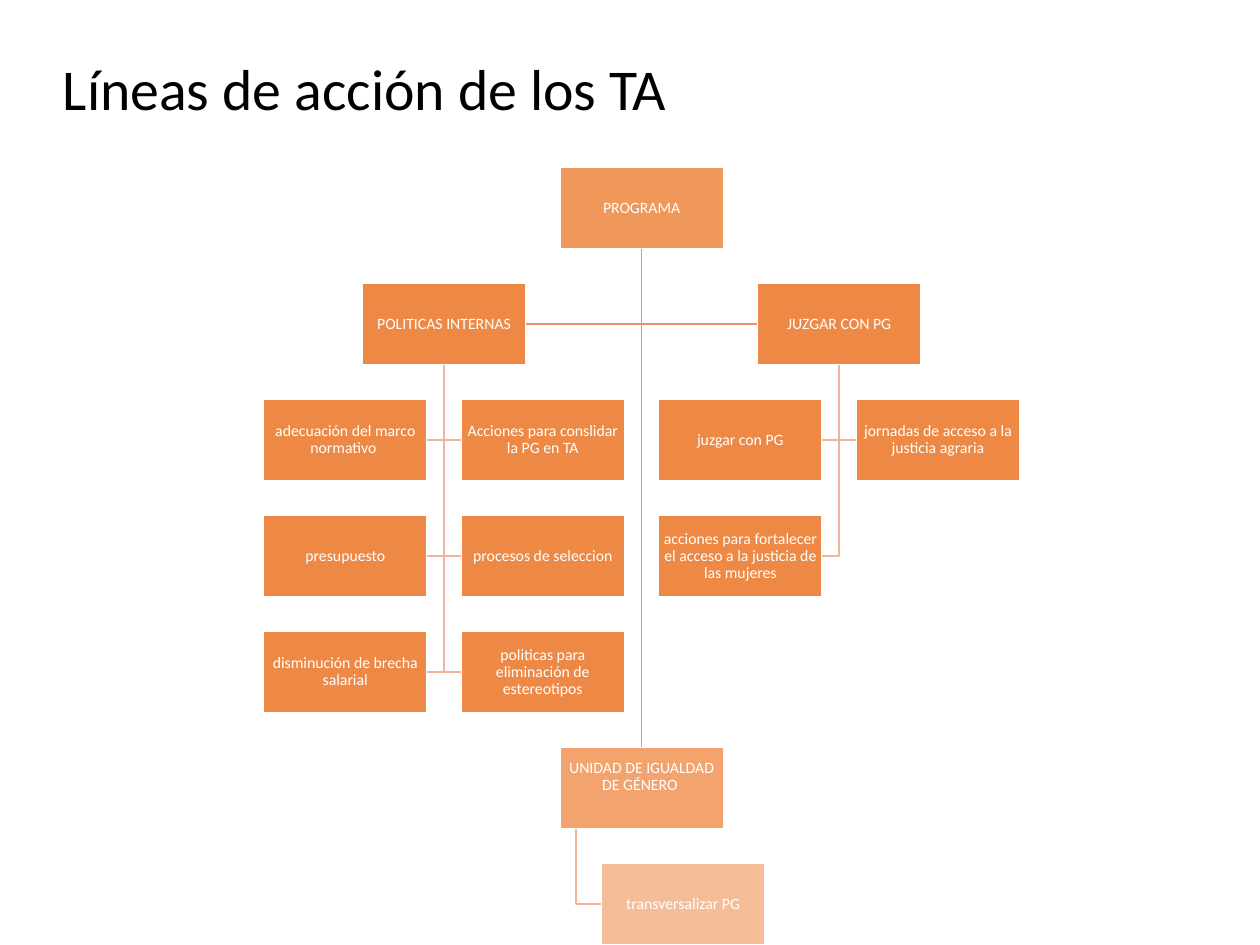
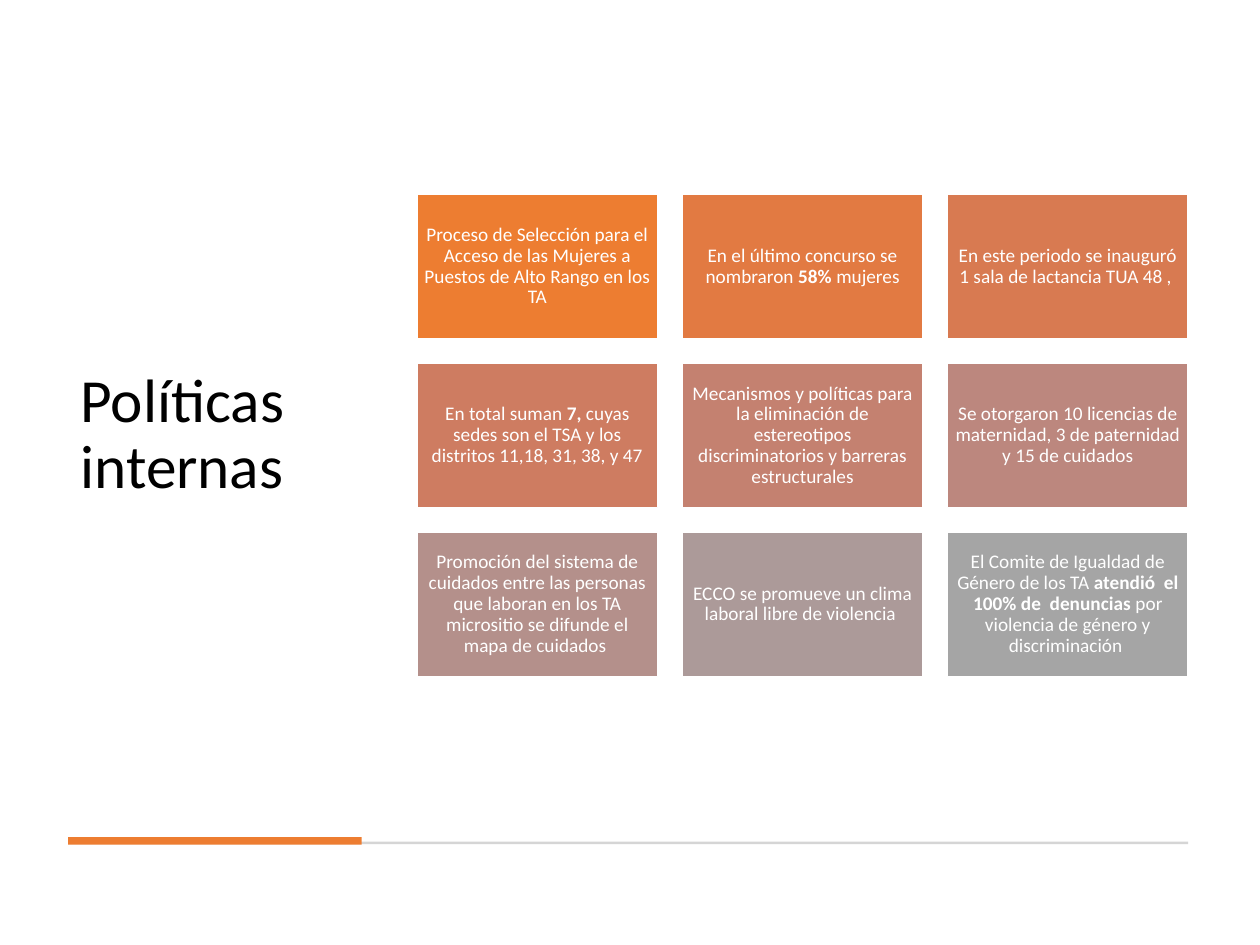
from dataclasses import dataclass
from typing import NamedTuple

from lxml import etree
from pptx import Presentation
from pptx import util as u
from pptx.dml.color import RGBColor
from pptx.enum import shapes, text
from pptx.oxml.ns import qn


@dataclass(frozen=True)
class Theme:
    font: str = "Calibri"
    ink: str = "000000"
    white: str = "FFFFFF"
    accent: str = "ED7D31"
    rule: str = "D5D5D5"
    trunk: str = "EF9166"
    branch: str = "F3B29A"
    line: float = 1
    chart_title: int = 33
    side_title: int = 35
    node: int = 9
    card: int = 11


T = Theme()
WIDTH, HEIGHT = u.Inches(10), u.Inches(7.5)


class Box(NamedTuple):
    """A rectangle in percent of the slide's width and height."""
    x: float
    y: float
    w: float
    h: float

    def emu(self) -> tuple[int, ...]:
        return tuple(round(share * side / 100) for share, side
                     in zip(self, (WIDTH, HEIGHT, WIDTH, HEIGHT)))


@dataclass(frozen=True)
class Grid:
    """Equal cells: the first cell and the steps between cells, in percent."""
    first: Box
    dx: float
    dy: float

    def cell(self, col: float, row: float) -> Box:
        x, y, w, h = self.first
        return Box(x + col * self.dx, y + row * self.dy, w, h)


@dataclass(frozen=True)
class Node:
    label: str
    col: float
    row: int
    parent: str = ""
    opacity: int = 90
    color: str = T.branch
    start: float = 0.5      # where the branch leaves the parent's bottom side
    foot: float = 0.01      # bottom inset in inches


class Card(NamedTuple):
    color: str
    phrases: tuple[str, ...]  # every second phrase is bold


CHART = Grid(Box(20.9, 17.73, 13, 8.65), 7.84, 12.27)
CARDS = Grid(Box(33.1, 20.55, 19.1, 15.3), 21.05, 17.87)

ROOT, UNIT = "PROGRAMA", "UNIDAD DE IGUALDAD DE GÉNERO "
INTERNAL, JUDGING = "POLITICAS INTERNAS", "JUZGAR CON PG"
NODES = [
    Node(ROOT, 3, 0, opacity=80),
    Node(UNIT, 3, 5, opacity=70, foot=0.19),
    Node("transversalizar PG", 3.42, 6, UNIT, opacity=50, start=0.1),
    Node(INTERNAL, 1, 1, ROOT, color=T.trunk),
    Node("adecuación del marco normativo ", 0, 2, INTERNAL),
    Node("Acciones para conslidar la PG en TA", 2, 2, INTERNAL),
    Node("presupuesto", 0, 3, INTERNAL),
    Node("procesos de seleccion", 2, 3, INTERNAL),
    Node("disminución de brecha salarial", 0, 4, INTERNAL),
    Node("politicas para eliminación de estereotipos", 2, 4, INTERNAL),
    Node(JUDGING, 5, 1, ROOT, color=T.trunk),
    Node("juzgar con PG", 4, 2, JUDGING),
    Node("jornadas de acceso a la justicia agraria", 6, 2, JUDGING),
    Node("acciones para fortalecer el acceso a la justicia de las mujeres", 4, 3, JUDGING),
]

POLICIES = [
    Card("ED7D31", ("Proceso de Selección para el Acceso de las Mujeres a Puestos "
                    "de Alto Rango en los TA",)),
    Card("E27A42", ("En el último concurso se nombraron ", "58% ", "mujeres")),
    Card("D87A51", ("En este periodo se inauguró 1 sala de lactancia TUA 48 , ",)),
    Card("CE7C61", ("En total suman ", "7, ",
                    "cuyas sedes son el TSA y los distritos 11,18, 31, 38, y 47")),
    Card("C48170", ("Mecanismos y políticas para la eliminación de estereotipos "
                    "discriminatorios y barreras estructurales",)),
    Card("BC877E", ("Se otorgaron 10 licencias de maternidad, 3 de paternidad "
                    "y 15 de cuidados",)),
    Card("B4908B", ("Promoción del sistema de cuidados entre las personas que laboran "
                    "en los TA micrositio se difunde el mapa de cuidados ",)),
    Card("AC9A99", ("ECCO se promueve un clima laboral libre de violencia ",)),
    Card("A5A5A5", ("El Comite de Igualdad de Género de los TA ",
                    "atendió  el 100% de  denuncias ",
                    "por violencia de género y discriminación ")),
]


def write(sp, *phrases: str, size: int, color: str = T.white, align=text.PP_ALIGN.CENTER,
          inset: tuple[float, float, float, float] = (0.1, 0.05, 0.1, 0.05)) -> None:
    """Write one paragraph; every second phrase is bold. Inset: left, top, right, bottom."""
    tf = sp.text_frame
    tf.word_wrap = True
    tf.vertical_anchor = text.MSO_ANCHOR.MIDDLE
    (tf.margin_left, tf.margin_top,
     tf.margin_right, tf.margin_bottom) = map(u.Inches, inset)
    p = tf.paragraphs[0]
    p.alignment = align
    p.line_spacing = 0.9
    for i, phrase in enumerate(phrases):
        r = p.add_run()
        r.text = phrase
        r.font.name = T.font
        r.font.size = u.Pt(size)
        r.font.bold = i % 2 == 1
        r.font.color.rgb = RGBColor.from_string(color)


def add_title(s, box: Box, label: str, size: int) -> None:
    sp = s.shapes.add_textbox(*box.emu())
    write(sp, label, size=size, color=T.ink, align=text.PP_ALIGN.LEFT)


def set_line(sp, color: str) -> None:
    sp.line.color.rgb = RGBColor.from_string(color)
    sp.line.width = u.Pt(T.line)


def add_rect(s, box: Box, color: str, border: str = "", opacity: int = 100):
    sp = s.shapes.add_shape(shapes.MSO_SHAPE.RECTANGLE, *box.emu())
    sp.shadow.inherit = False
    sp.fill.solid()
    sp.fill.fore_color.rgb = RGBColor.from_string(color)
    if opacity < 100:
        clr = sp._element.spPr.find(qn("a:solidFill"))[0]
        etree.SubElement(clr, qn("a:alpha"), val=str(opacity * 1000))
    if border:
        set_line(sp, border)
    else:
        sp.line.fill.background()
    return sp


def add_branch(s, parent, child, start: float, color: str) -> None:
    """Go down from the parent's bottom side, then across to the child's near side."""
    x = parent.left + round(parent.width * start)
    y = child.top + child.height // 2
    end = child.left if child.left > x else child.left + child.width
    fb = s.shapes.build_freeform(x, parent.top + parent.height)
    fb.add_line_segments([(x, y), (end, y)], close=False)
    sp = fb.convert_to_shape()
    sp.shadow.inherit = False
    sp.fill.background()
    set_line(sp, color)


def add_trunk(s, top, bottom) -> None:
    cx = s.shapes.add_connector(shapes.MSO_CONNECTOR.STRAIGHT, 0, 0, 0, 0)
    cx.begin_connect(top, 2)
    cx.end_connect(bottom, 0)
    set_line(cx, T.trunk)
    etree.SubElement(cx._element.spPr, qn("a:effectLst"))


def action_lines(s) -> None:
    add_title(s, Box(4, 0, 86.2, 19.33), "Líneas de acción de los TA", T.chart_title)
    # Boxes of the organisation chart
    boxes = {}
    for n in NODES:
        sp = add_rect(s, CHART.cell(n.col, n.row), T.accent, T.white, n.opacity)
        write(sp, n.label, size=T.node, inset=(0.01, 0.01, 0.01, n.foot))
        boxes[n.label] = sp
    # Lines between them
    for n in NODES:
        if n.parent:
            add_branch(s, boxes[n.parent], boxes[n.label], n.start, n.color)
    add_trunk(s, boxes[ROOT], boxes[UNIT])


def internal_policies(s) -> None:
    add_title(s, Box(5.4, 6.27, 23.3, 79.6), "Políticas internas", T.side_title)
    # Rule with its accent
    add_rect(s, Box(5.4, 89.07, 88.9, 0.27), T.rule)
    add_rect(s, Box(5.4, 88.6, 23.3, 0.8), T.accent)
    # Cards, three to a row
    for i, card in enumerate(POLICIES):
        row, col = divmod(i, 3)
        sp = add_rect(s, CARDS.cell(col, row), card.color, T.white)
        write(sp, *card.phrases, size=T.card, inset=(0.05,) * 4)


def main() -> None:
    prs = Presentation()
    prs.slide_width, prs.slide_height = WIDTH, HEIGHT
    for build in (action_lines, internal_policies):
        build(prs.slides.add_slide(prs.slide_layouts[6]))
    prs.save("out.pptx")


if __name__ == "__main__":
    main()
